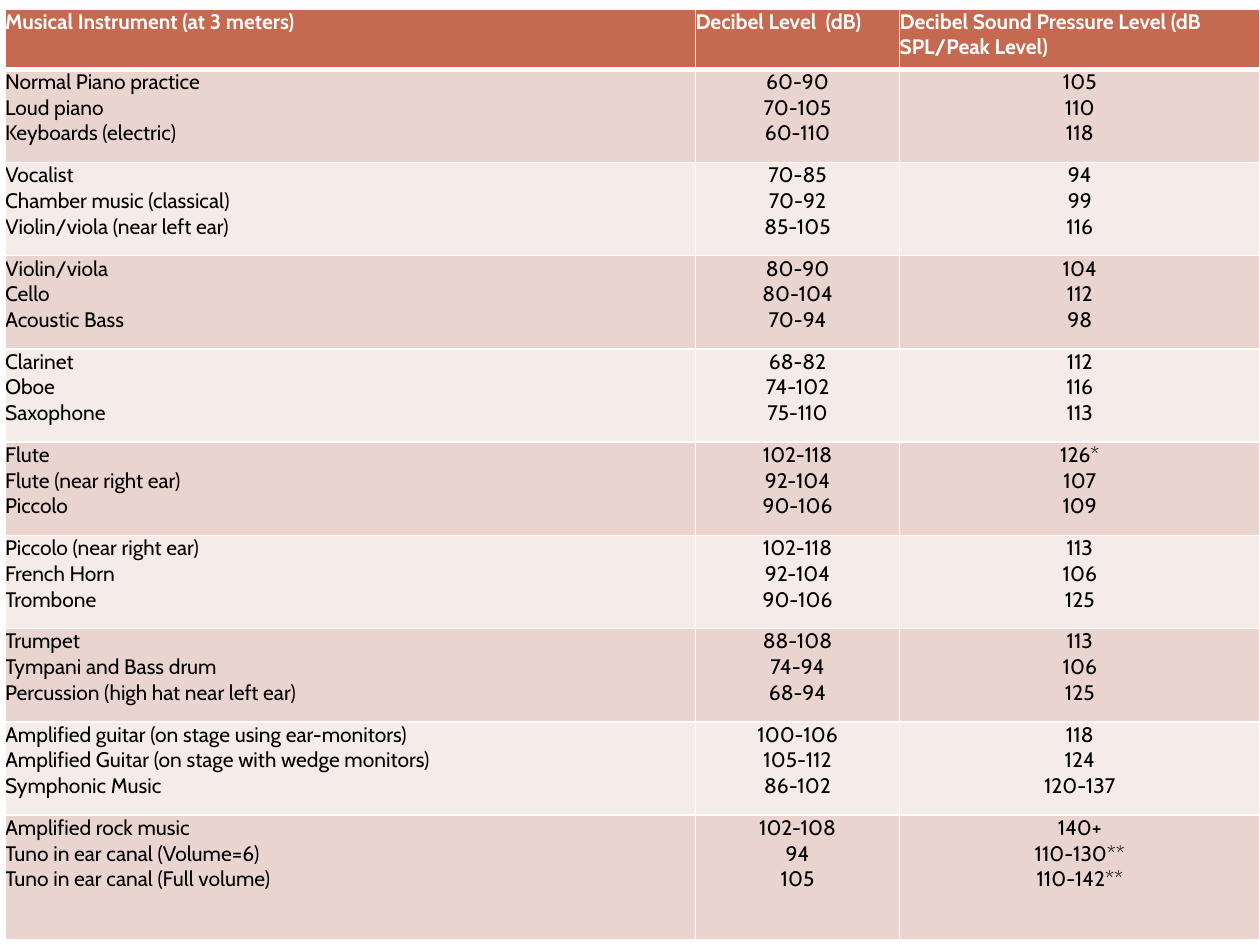
from dataclasses import dataclass

from lxml.etree import SubElement
from pptx import Presentation
from pptx.dml.color import RGBColor
from pptx.enum.text import PP_ALIGN as Align
from pptx.oxml.ns import qn
from pptx.util import Inches, Pt

FONT, SIZE = "Cabin", 12
WHITE, BLACK = "FFFFFF", "000000"
HEADER_FILL = "C66951"
BAND_FILLS = ("EAD4D0", "F5EBE9")
COL_WIDTHS = (5.48, 1.62, 2.86)
HEADER_HEIGHT, GROUP_HEIGHT, LAST_HEIGHT = 0.48, 0.74, 0.99


@dataclass
class Sound:
    instrument: str
    level: str
    peak: str


HEADER = Sound("Musical Instrument (at 3 meters)", "Decibel Level  (dB)",
               "Decibel Sound Pressure Level (dB SPL/Peak Level)")

# Each group of three sounds shares one table row
GROUPS = [
    [Sound("Normal Piano practice", "60-90", "105"),
     Sound("Loud piano", "70-105", "110"),
     Sound("Keyboards (electric)", "60-110", "118")],
    [Sound("Vocalist", "70-85", "94"),
     Sound("Chamber music (classical)", "70-92", "99"),
     Sound("Violin/viola (near left ear)", "85-105", "116")],
    [Sound("Violin/viola", "80-90", "104"),
     Sound("Cello", "80-104", "112"),
     Sound("Acoustic Bass", "70-94", "98")],
    [Sound("Clarinet", "68-82", "112"),
     Sound("Oboe", "74-102", "116"),
     Sound("Saxophone", "75-110", "113")],
    [Sound("Flute", "102-118", "126*"),
     Sound("Flute (near right ear)", "92-104", "107"),
     Sound("Piccolo", "90-106", "109")],
    [Sound("Piccolo (near right ear)", "102-118", "113"),
     Sound("French Horn", "92-104", "106"),
     Sound("Trombone", "90-106", "125")],
    [Sound("Trumpet", "88-108", "113"),
     Sound("Tympani and Bass drum", "74-94", "106"),
     Sound("Percussion (high hat near left ear)", "68-94", "125")],
    [Sound("Amplified guitar (on stage using ear-monitors)", "100-106", "118"),
     Sound("Amplified Guitar (on stage with wedge monitors)", "105-112", "124"),
     Sound("Symphonic Music", "86-102", "120-137")],
    [Sound("Amplified rock music", "102-108", "140+"),
     Sound("Tuno in ear canal (Volume=6)", "94", "110-130**"),
     Sound("Tuno in ear canal (Full volume)", "105", "110-142**")],
]


def rgb(color: str) -> RGBColor:
    return RGBColor.from_string(color)


def set_borders(cell, top: float = 1, bottom: float = 1) -> None:
    """Draw white borders, with widths in points."""
    tc_pr = cell._tc.get_or_add_tcPr()
    for side, width in (("L", 1), ("R", 1), ("T", top), ("B", bottom)):
        ln = SubElement(tc_pr, qn(f"a:ln{side}"), w=str(Pt(width)))
        fill = SubElement(ln, qn("a:solidFill"))
        SubElement(fill, qn("a:srgbClr"), val=WHITE)


def write_lines(tf, lines: list[str], *, color: str, bold: bool = False,
                align: Align = Align.LEFT) -> None:
    for i, text in enumerate(lines):
        p = tf.paragraphs[0] if i == 0 else tf.add_paragraph()
        p.alignment = align
        r = p.add_run()
        r.text = text
        r.font.name, r.font.size, r.font.bold = FONT, Pt(SIZE), bold
        r.font.color.rgb = rgb(color)


def fill_row(table, row: int, sounds: list[Sound]) -> None:
    is_header = row == 0
    columns = ([s.instrument for s in sounds], [s.level for s in sounds],
               [s.peak for s in sounds])
    for col, lines in enumerate(columns):
        cell = table.cell(row, col)
        cell.margin_left = cell.margin_right = Inches(0)
        cell.margin_top = cell.margin_bottom = Inches(0)
        set_borders(cell, top=3 if row == 1 else 1, bottom=3 if is_header else 1)
        cell.fill.solid()
        cell.fill.fore_color.rgb = rgb(
            HEADER_FILL if is_header else BAND_FILLS[(row - 1) % 2])
        write_lines(cell.text_frame, lines, bold=is_header,
                    color=WHITE if is_header else BLACK,
                    align=Align.LEFT if is_header or col == 0 else Align.CENTER)


def main() -> None:
    prs = Presentation()
    prs.slide_width, prs.slide_height = Inches(10), Inches(7.5)
    s = prs.slides.add_slide(prs.slide_layouts[6])

    # Table grid
    heights = [HEADER_HEIGHT] + [GROUP_HEIGHT] * (len(GROUPS) - 1) + [LAST_HEIGHT]
    table = s.shapes.add_table(
        len(heights), len(COL_WIDTHS), Inches(0.04), Inches(0.07),
        Inches(sum(COL_WIDTHS)), Inches(sum(heights))).table
    for column, width in zip(table.columns, COL_WIDTHS):
        column.width = Inches(width)
    for row, height in zip(table.rows, heights):
        row.height = Inches(height)

    # Header and instrument groups
    for i, sounds in enumerate([[HEADER], *GROUPS]):
        fill_row(table, i, sounds)

    prs.save("out.pptx")


if __name__ == "__main__":
    main()
